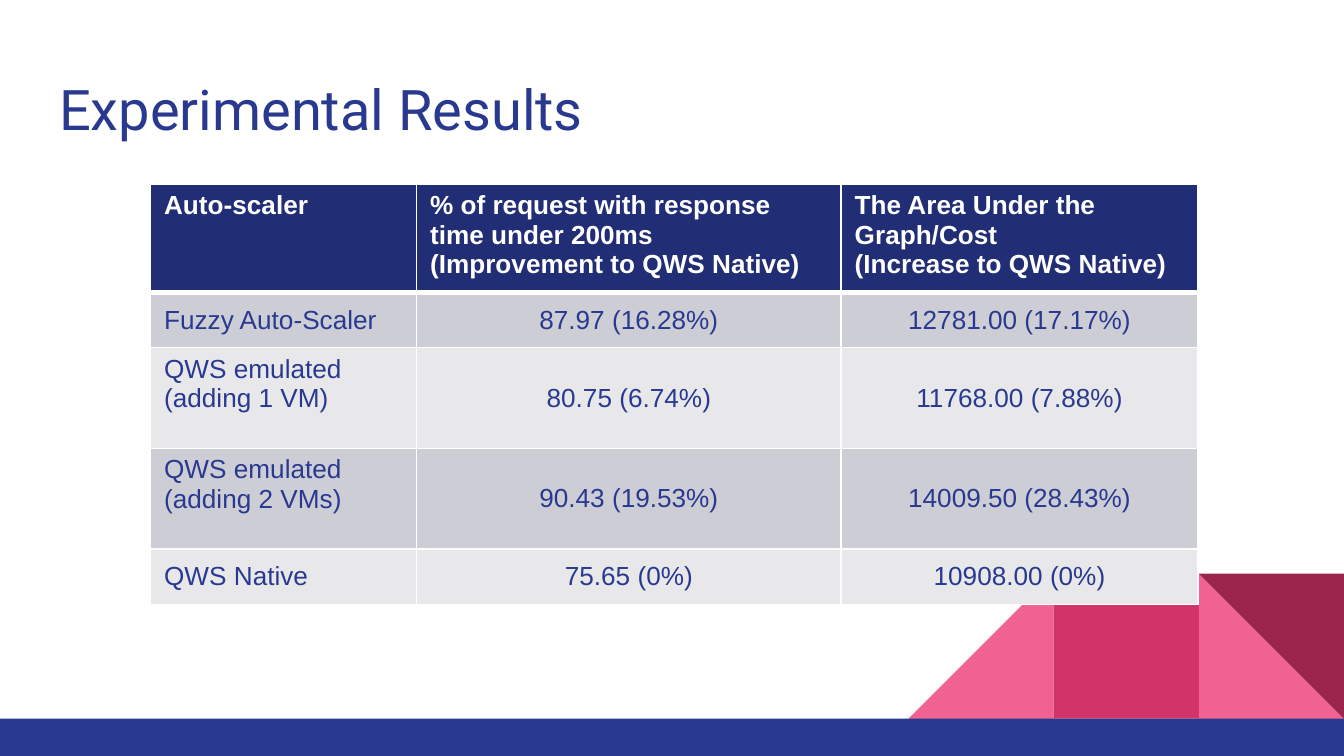
"""Build the experimental results slide with its table and corner pattern."""
from lxml import etree
from pptx import Presentation
from pptx import util as u
from pptx.dml.color import RGBColor
from pptx.enum import shapes, text
from pptx.oxml import ns

NAVY, DARK_NAVY, WHITE = "2A3990", "212D74", "FFFFFF"
PINK, ROSE, WINE = "F06292", "D23369", "9C254D"
BANDS = ("CDCDD6", "E8E8EB")
TILE, TILE_TOP, TILE_RIGHT = 77.76, 307.3, 720
COLUMNS = (142.5, 227.5, 191)
ROWS = (58, 29.5, 54, 54, 29.5)
RESULTS = (
    ("Auto-scaler",
     "% of request with response time under 200ms\n(Improvement to QWS Native)",
     "The Area Under the Graph/Cost\n(Increase to QWS Native)"),
    ("Fuzzy Auto-Scaler", "87.97 (16.28%)", "12781.00 (17.17%)"),
    ("QWS emulated (adding 1 VM)", "80.75 (6.74%)", "11768.00 (7.88%)"),
    ("QWS emulated (adding 2 VMs)", "90.43 (19.53%)", "14009.50 (28.43%)"),
    ("QWS Native", "75.65 (0%)", "10908.00 (0%)"),
)


def color(value):
    return RGBColor.from_string(value)


def apply(target, values):
    for name, value in values.items():
        setattr(target, name, value)


class SlideBuilder:
    def __init__(self, deck):
        self.page = deck.slides.add_slide(deck.slide_layouts[5])
        self.title_font = {"name": "Roboto", "size": u.Pt(30), "bold": False}
        self.head_font = {"name": "Arial", "size": u.Pt(14), "bold": True}
        self.body_font = {**self.head_font, "bold": False}

    def fill_text(self, frame, words, font, ink, align):
        frame.text = words
        for para in frame.paragraphs:
            para.alignment = align
            for span in para.runs:
                apply(span.font, font)
                span.font.color.rgb = color(ink)

    def title(self, words, left, top, width, height):
        box = self.page.shapes.title
        apply(box, {"left": u.Pt(left), "top": u.Pt(top),
                    "width": u.Pt(width), "height": u.Pt(height)})
        frame = box.text_frame
        sides = ("left", "top", "right", "bottom")
        apply(frame, {f"margin_{side}": u.Pt(7.2) for side in sides})
        apply(frame, {"word_wrap": True, "auto_size": text.MSO_AUTO_SIZE.NONE,
                      "vertical_anchor": text.MSO_ANCHOR.TOP})
        self.fill_text(frame, words, self.title_font, NAVY, text.PP_ALIGN.LEFT)

    def shape(self, kind, left, top, width, height, fill, turn=0, flip=False):
        shape = self.page.shapes.add_shape(
            kind, u.Pt(left), u.Pt(top), u.Pt(width), u.Pt(height))
        shape.shadow.inherit = False
        shape.fill.solid()
        shape.fill.fore_color.rgb = color(fill)
        shape.line.fill.background()
        shape.rotation = turn
        if flip:
            shape.element.spPr.xfrm.set("flipH", "1")

    def borders(self, cell, top, bottom):
        props = cell._tc.get_or_add_tcPr()
        for side, width in (("L", 1), ("R", 1), ("T", top), ("B", bottom)):
            line = etree.SubElement(props, ns.qn(f"a:ln{side}"), w=str(u.Pt(width)))
            fill = etree.SubElement(line, ns.qn("a:solidFill"))
            etree.SubElement(fill, ns.qn("a:srgbClr"), val=WHITE)

    def table(self, left, top, columns, rows, values):
        grid = self.page.shapes.add_table(
            len(rows), len(columns), u.Pt(left), u.Pt(top),
            u.Pt(sum(columns)), u.Pt(sum(rows))).table
        for column, width in zip(grid.columns, columns):
            column.width = u.Pt(width)
        for r, (row, height) in enumerate(zip(grid.rows, rows)):
            row.height = u.Pt(height)
            for c, cell in enumerate(row.cells):
                self.cell(cell, values[r][c], r, c)

    def cell(self, cell, words, row, column):
        head = row == 0
        wrapped = column == 0 and "(" in words
        self.borders(cell, 3 if row == 1 else 1, 3 if head else 1)
        cell.fill.solid()
        cell.fill.fore_color.rgb = color(DARK_NAVY if head else BANDS[(row - 1) % 2])
        cell.vertical_anchor = (text.MSO_ANCHOR.TOP if head or wrapped
                                else text.MSO_ANCHOR.MIDDLE)
        self.fill_text(cell.text_frame, words,
                       self.head_font if head else self.body_font,
                       WHITE if head else NAVY,
                       text.PP_ALIGN.LEFT if head or column == 0
                       else text.PP_ALIGN.CENTER)


def main():
    deck = Presentation()
    apply(deck, {"slide_width": u.Pt(720), "slide_height": u.Pt(405)})
    builder = SlideBuilder(deck)
    triangle = shapes.MSO_SHAPE.RIGHT_TRIANGLE
    rectangle = shapes.MSO_SHAPE.RECTANGLE
    tiles = (
        (1, triangle, PINK, 0, False),
        (3, triangle, PINK, 0, True),
        (2, rectangle, ROSE, 0, False),
        (1, triangle, WINE, 180, False),
    )
    for place, kind, fill, turn, flip in tiles:
        builder.shape(kind, TILE_RIGHT - place * TILE, TILE_TOP,
                      TILE, TILE, fill, turn, flip)
    builder.shape(rectangle, 0, 385, 720, 20, NAVY)
    builder.title("Experimental Results", 24.5, 32.5, 671, 47.5)
    builder.table(80.7, 98.8, COLUMNS, ROWS, RESULTS)
    deck.save("out.pptx")


if __name__ == "__main__":
    main()
